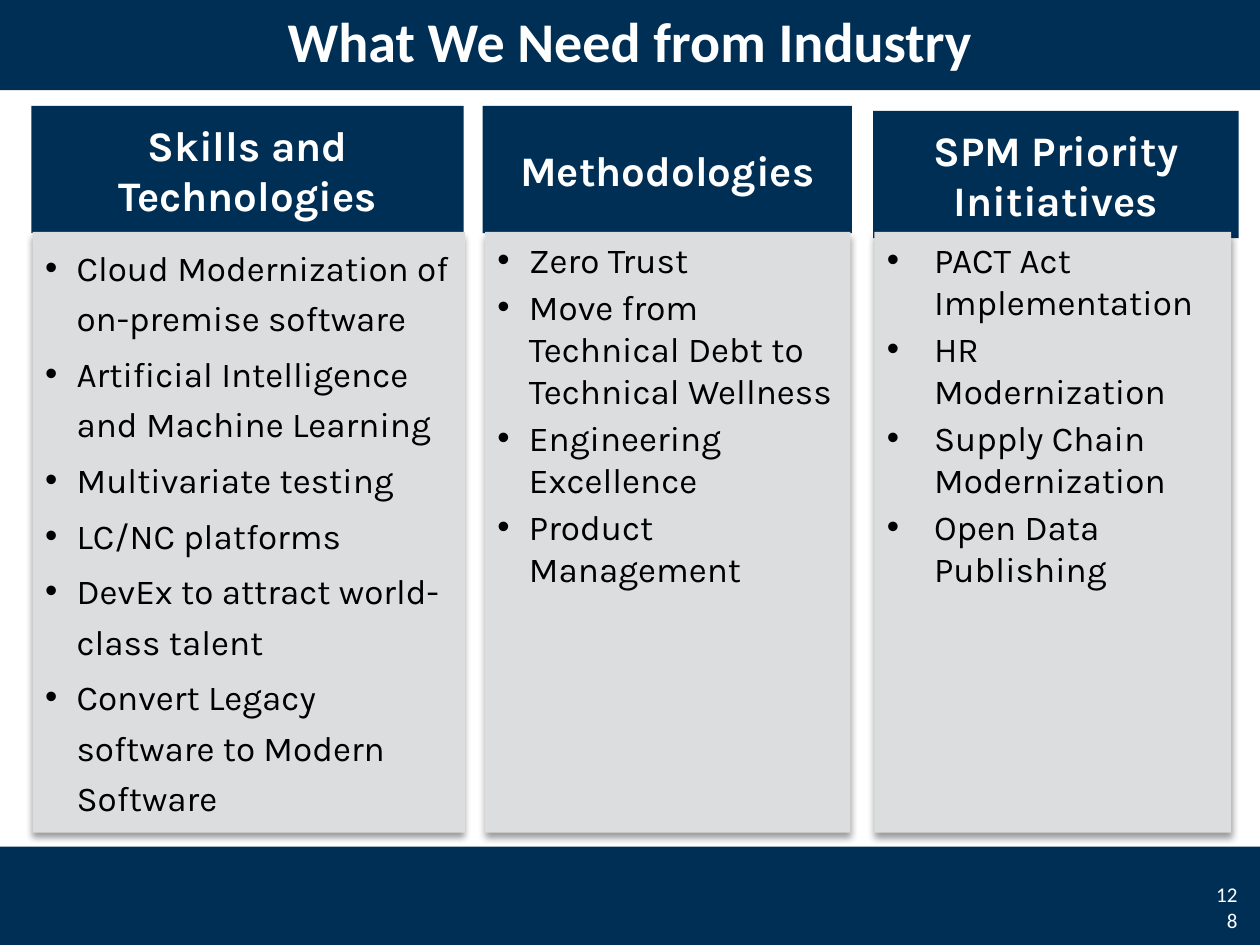
from lxml import etree
from pptx import Presentation
from pptx.dml.color import RGBColor
from pptx.enum.shapes import MSO_SHAPE as Preset
from pptx.enum.text import MSO_ANCHOR as Anchor, PP_ALIGN as Align
from pptx.oxml.ns import qn
from pptx.util import Pt

NAVY, GREY, WHITE, BLACK = "002F56", "DCDDDE", "FFFFFF", "000000"
BAND_HEIGHT = 57.6
HEADING_HEIGHT = 72.7
PANEL_TOP, PANEL_HEIGHT = 132.5, 343.4

COLUMNS = [
    {
        "heading": "Skills and Technologies",
        "heading_box": (18, 60.5, 247, HEADING_HEIGHT),
        "panel_box": (18.7, PANEL_TOP, 247, PANEL_HEIGHT),
        "indent": 18,
        "line_spacing": 1.2,
        "items": [
            "Cloud Modernization of on-premise software",
            "Artificial Intelligence and Machine Learning",
            "Multivariate testing",
            "LC/NC platforms",
            "DevEx to attract world-class talent",
            "Convert Legacy software to Modern Software",
        ],
    },
    {
        "heading": "Methodologies",
        "heading_box": (275.8, 60.5, 211, HEADING_HEIGHT),
        "panel_box": (277.2, PANEL_TOP, 208.8, PANEL_HEIGHT),
        "indent": 18,
        "line_spacing": 1.0,
        "items": [
            "Zero Trust",
            "Move from Technical Debt to Technical Wellness",
            "Engineering Excellence",
            "Product Management",
        ],
    },
    {
        "heading": "SPM Priority Initiatives",
        "heading_box": (499, 63.4, 208.8, HEADING_HEIGHT),
        "panel_box": (499.7, PANEL_TOP, 203.8, PANEL_HEIGHT),
        "indent": 27,
        "line_spacing": 1.0,
        "items": [
            "PACT Act Implementation",
            "HR Modernization",
            "Supply Chain Modernization",
            "Open Data Publishing",
        ],
    },
]


def color(value):
    return RGBColor.from_string(value)


def points(box):
    return [Pt(length) for length in box]


def add_rectangle(slide, box, fill):
    shape = slide.shapes.add_shape(Preset.RECTANGLE, *points(box))
    shape.shadow.inherit = False
    shape.fill.solid()
    shape.fill.fore_color.rgb = color(fill)
    shape.line.fill.background()
    return shape


def add_shadow(shape):
    effects = shape._element.spPr.find(qn("a:effectLst"))
    shadow = etree.SubElement(
        effects, qn("a:outerShdw"), blurRad=str(Pt(4)), dist=str(Pt(3)),
        dir="5400000", algn="t", rotWithShape="0")
    shade = etree.SubElement(shadow, qn("a:srgbClr"), val=BLACK)
    etree.SubElement(shade, qn("a:alpha"), val="40000")


def add_bullet(paragraph, indent):
    properties = paragraph._p.get_or_add_pPr()
    properties.set("marL", str(Pt(indent)))
    properties.set("indent", str(-Pt(indent)))
    etree.SubElement(properties, qn("a:buFont"), typeface="Arial")
    etree.SubElement(properties, qn("a:buChar"), char="•")


def add_run(paragraph, text, size, font_name, font_color, bold=False):
    run = paragraph.add_run()
    run.text = text
    run.font.size = Pt(size)
    run.font.name = font_name
    run.font.bold = bold
    run.font.color.rgb = color(font_color)


def write_line(shape, text, align, size, font_name, bold=False):
    frame = shape.text_frame
    frame.word_wrap = True
    frame.vertical_anchor = Anchor.MIDDLE
    paragraph = frame.paragraphs[0]
    paragraph.alignment = align
    add_run(paragraph, text, size, font_name, WHITE, bold)


def add_title(slide, box, text):
    add_rectangle(slide, box, NAVY)
    title = slide.shapes.title
    title.left, title.top, title.width, title.height = points(box)
    write_line(title, text, Align.CENTER, 32, "Calibri", bold=True)
    slide.shapes._spTree.append(title._element)


def add_panel(slide, box, items, indent, line_spacing):
    panel = add_rectangle(slide, box, GREY)
    add_shadow(panel)
    frame = panel.text_frame
    frame.word_wrap = True
    frame.vertical_anchor = Anchor.TOP
    for index, item in enumerate(items):
        paragraph = frame.add_paragraph() if index else frame.paragraphs[0]
        paragraph.alignment = Align.LEFT
        paragraph.line_spacing = line_spacing
        paragraph.space_before = Pt(3 if index else 0)
        add_bullet(paragraph, indent)
        add_run(paragraph, item, 20, "Karla", BLACK)


def add_column(slide, column):
    heading = add_rectangle(slide, column["heading_box"], NAVY)
    write_line(heading, column["heading"], Align.CENTER, 24, "Karla", bold=True)
    add_panel(slide, column["panel_box"], column["items"],
              column["indent"], column["line_spacing"])


def add_footer(slide, box, number):
    left, top, width, height = box
    add_rectangle(slide, box, NAVY)
    number_box = slide.shapes.add_textbox(
        *points((left + width - 36, top + 20.2, 30.2, 28.8)))
    write_line(number_box, number, Align.RIGHT, 12, "Calibri")


def main():
    presentation = Presentation()
    presentation.slide_width, presentation.slide_height = Pt(720), Pt(540)
    slide = presentation.slides.add_slide(presentation.slide_layouts[5])
    add_title(slide, (0, -6, 720, BAND_HEIGHT), "What We Need from Industry")
    for column in COLUMNS:
        add_column(slide, column)
    add_footer(slide, (0, 483.8, 720, BAND_HEIGHT), "128")
    presentation.save("out.pptx")


if __name__ == "__main__":
    main()
